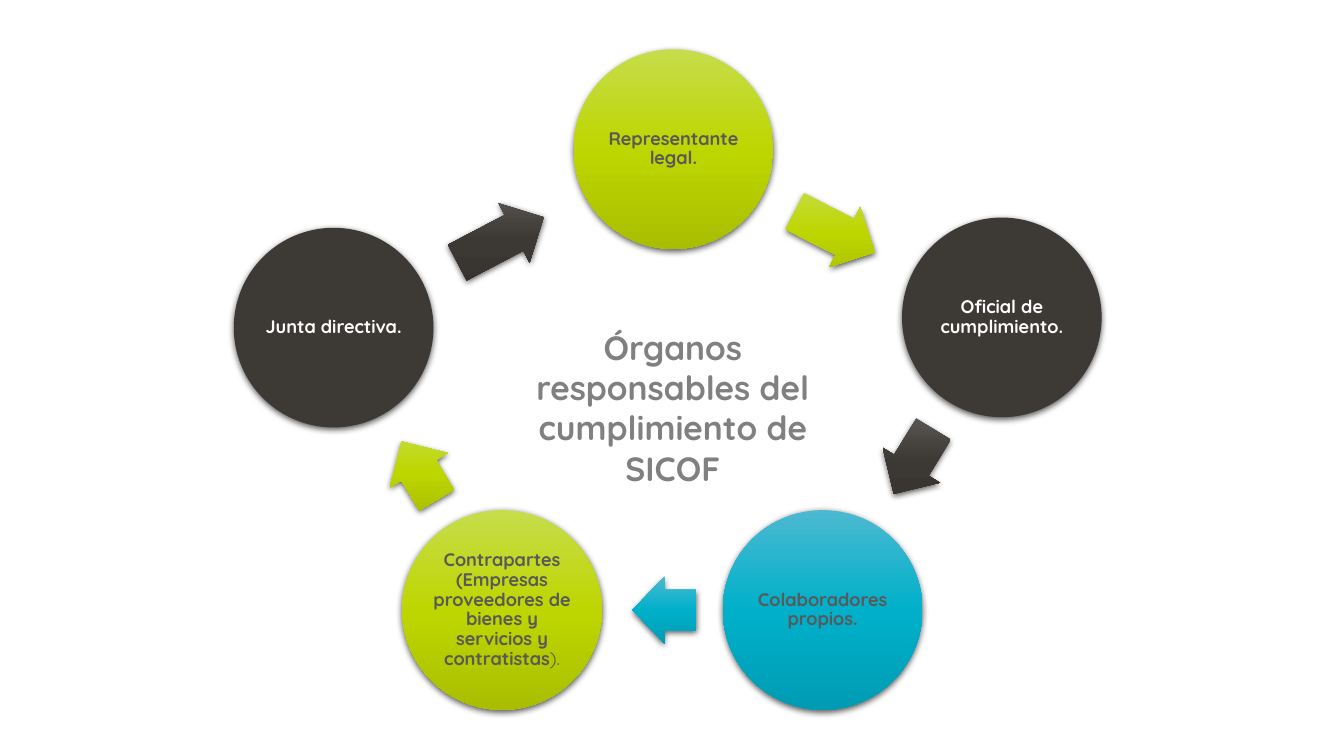
import math
from dataclasses import dataclass

import pptx
import pptx.dml.color
import pptx.enum.shapes
import pptx.enum.text
import pptx.oxml
import pptx.oxml.ns
import pptx.util


@dataclass(frozen=True)
class Theme:
    font: str = "Quicksand"
    title_size: float = 24
    label_size: float = 13
    title_color: str = "808080"
    label_color: str = "595959"
    light_label_color: str = "FFFFFF"
    charcoal: str = "3D3935"
    green_gradient: tuple = ("C6DD4B", "BED600", "A9BE00")
    charcoal_gradient: tuple = ("5C5A57", "3C3834", "36322D")
    blue_gradient: tuple = ("4BB9D1", "00B0CA", "009CB4")


THEME = Theme()
DIAMETER = 142.6
ARROW_HEIGHT = 48.1
ARROW_SHARE = 0.53
ARROW_PULL = 0.018

GREEN = (THEME.green_gradient, THEME.green_gradient, THEME.label_color)
DARK = (THEME.charcoal, THEME.charcoal_gradient, THEME.light_label_color)
BLUE = (THEME.blue_gradient, THEME.blue_gradient, THEME.label_color)

ORGANS = [
    ((481, 106.5), GREEN, [("Representante legal.", True)]),
    ((715.6, 226.7), DARK, [("Oficial de cumplimiento.", True)]),
    ((587.6, 435.7), BLUE, [("Colaboradores propios.", True)]),
    ((358.6, 435.7), GREEN, [
        ("Contrapartes (Empresas proveedores de bienes y servicios y contratistas", True),
        (").", False),
    ]),
    ((238.3, 234), DARK, [("Junta directiva.", True)]),
]


def write_text(text_frame, pieces, *, size, color, anchor, insets, line_spacing=1.0):
    text_frame.word_wrap = True
    text_frame.auto_size = pptx.enum.text.MSO_AUTO_SIZE.NONE
    text_frame.vertical_anchor = anchor
    horizontal, vertical = (pptx.util.Pt(inset) for inset in insets)
    text_frame.margin_left = text_frame.margin_right = horizontal
    text_frame.margin_top = text_frame.margin_bottom = vertical
    paragraph = text_frame.paragraphs[0]
    paragraph.alignment = pptx.enum.text.PP_ALIGN.CENTER
    paragraph.line_spacing = line_spacing
    paragraph.space_before = pptx.util.Pt(0)
    for text, bold in pieces:
        run = paragraph.add_run()
        run.text = text
        run.font.name = THEME.font
        run.font.size = pptx.util.Pt(size)
        run.font.bold = bold
        run.font.color.rgb = pptx.dml.color.RGBColor.from_string(color)


class SlideBuilder:
    def __init__(self, slide, theme):
        self.slide = slide
        self.theme = theme
        self.cycle = slide.shapes.add_group_shape()

    def title(self, text, left, top, width, height):
        shape = self.slide.shapes.title
        shape.left, shape.top = pptx.util.Pt(left), pptx.util.Pt(top)
        shape.width, shape.height = pptx.util.Pt(width), pptx.util.Pt(height)
        write_text(shape.text_frame, [(text, True)], size=self.theme.title_size,
                   color=self.theme.title_color, insets=(7.2, 3.6),
                   anchor=pptx.enum.text.MSO_ANCHOR.TOP)

    def circle(self, center, fill, pieces, color):
        shape = self.shape(pptx.enum.shapes.MSO_SHAPE.OVAL, center, DIAMETER, DIAMETER, fill)
        write_text(shape.text_frame, pieces, size=self.theme.label_size, color=color,
                   anchor=pptx.enum.text.MSO_ANCHOR.MIDDLE, insets=(1.3, 1.3), line_spacing=0.9)

    def arrow(self, start, end, fill):
        across, down = end[0] - start[0], end[1] - start[1]
        distance = math.hypot(across, down)
        gap = distance - DIAMETER
        share = 0.5 - ARROW_PULL * gap / distance
        center = (start[0] + share * across, start[1] + share * down)
        shape = self.shape(pptx.enum.shapes.MSO_SHAPE.RIGHT_ARROW, center,
                           ARROW_SHARE * gap, ARROW_HEIGHT, fill)
        shape.adjustments[0] = 0.6
        shape.adjustments[1] = 0.5
        shape.rotation = math.degrees(math.atan2(down, across)) % 360

    def shape(self, kind, center, width, height, fill):
        shape = self.cycle.shapes.add_shape(
            kind, pptx.util.Pt(center[0] - width / 2), pptx.util.Pt(center[1] - height / 2),
            pptx.util.Pt(width), pptx.util.Pt(height))
        shape.line.fill.background()
        if isinstance(fill, str):
            shape.fill.solid()
            shape.fill.fore_color.rgb = pptx.dml.color.RGBColor.from_string(fill)
        else:
            self.gradient(shape, fill)
        self.shadow(shape)
        return shape

    def gradient(self, shape, colors):
        stops = "".join(
            f'<a:gs pos="{position}"><a:srgbClr val="{color}"/></a:gs>'
            for position, color in zip((0, 50000, 100000), colors))
        geometry = shape.element.spPr.find(pptx.oxml.ns.qn("a:prstGeom"))
        geometry.addnext(pptx.oxml.parse_xml(
            f'<a:gradFill {pptx.oxml.ns.nsdecls("a")} rotWithShape="0">'
            f'<a:gsLst>{stops}</a:gsLst><a:lin ang="5400000" scaled="0"/></a:gradFill>'))

    def shadow(self, shape):
        blur, distance = pptx.util.Pt(4.5), pptx.util.Pt(1.5)
        shape.element.spPr.append(pptx.oxml.parse_xml(
            f'<a:effectLst {pptx.oxml.ns.nsdecls("a")}>'
            f'<a:outerShdw blurRad="{blur}" dist="{distance}" dir="5400000" rotWithShape="0">'
            '<a:srgbClr val="000000"><a:alpha val="63000"/></a:srgbClr>'
            '</a:outerShdw></a:effectLst>'))


def main():
    presentation = pptx.Presentation()
    presentation.slide_width = pptx.util.Pt(960)
    presentation.slide_height = pptx.util.Pt(540)
    slide = presentation.slides.add_slide(presentation.slide_layouts.get_by_name("Title Only"))
    builder = SlideBuilder(slide, THEME)
    for index, (center, (circle_fill, arrow_fill, color), pieces) in enumerate(ORGANS):
        next_center = ORGANS[(index + 1) % len(ORGANS)][0]
        builder.circle(center, circle_fill, pieces, color)
        builder.arrow(center, next_center, arrow_fill)
    builder.title("Órganos responsables del cumplimiento de SICOF", 370.8, 229.7, 219.6, 123.8)
    presentation.save("out.pptx")


if __name__ == "__main__":
    main()
